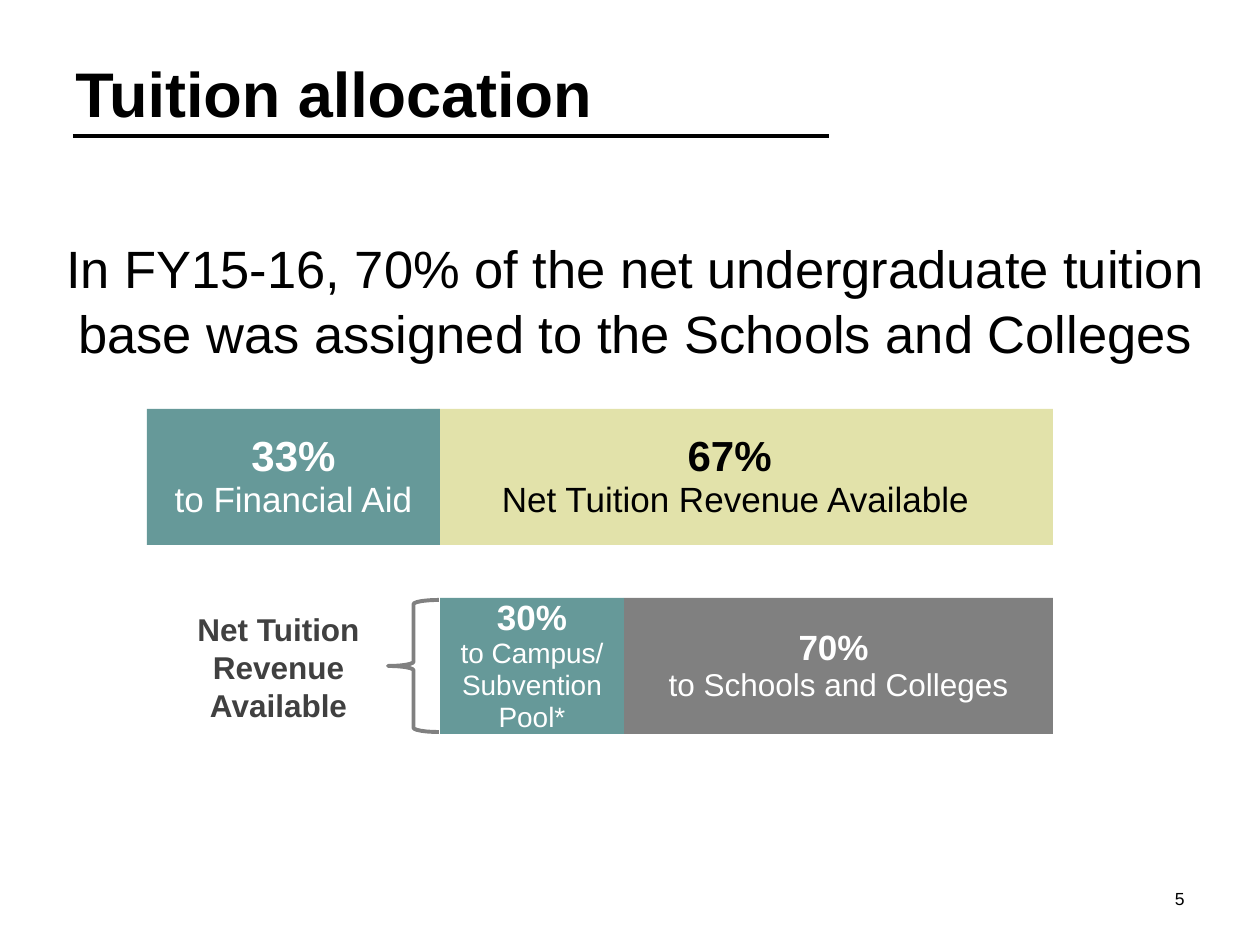
from lxml import etree
from pptx import Presentation
from pptx.dml.color import RGBColor
from pptx.enum.shapes import MSO_CONNECTOR, MSO_SHAPE
from pptx.enum.text import MSO_ANCHOR, PP_ALIGN
from pptx.oxml.ns import qn
from pptx.util import Pt

PX = 914400 / 126
FONT = "Arial"
BLACK = RGBColor(0x00, 0x00, 0x00)
WHITE = RGBColor(0xFF, 0xFF, 0xFF)
DARK = RGBColor(0x40, 0x40, 0x40)
GRAY = RGBColor(0x80, 0x80, 0x80)
TEAL = RGBColor(0x66, 0x99, 0x99)
SAND = RGBColor(0xE2, 0xE2, 0xAA)

BAR_H = 136
SPLIT = 440   # where financial aid ends and net tuition starts
RIGHT = 1053  # shared right edge of both bars


def px(*vals):
    return [round(v * PX) for v in vals]


def add_run(para, text, size, color, bold=False):
    run = para.add_run()
    run.text = text
    font = run.font
    font.name, font.size, font.bold = FONT, Pt(size), bold
    font.color.rgb = color


def add_text(slide, box, text, size, color=BLACK, bold=False,
             align=PP_ALIGN.LEFT, anchor=MSO_ANCHOR.TOP):
    frame = slide.shapes.add_textbox(*px(*box)).text_frame
    frame.word_wrap = True
    frame.vertical_anchor = anchor
    para = frame.paragraphs[0]
    para.alignment = align
    add_run(para, text, size, color, bold)
    return para


def add_part(slide, left, right, top, fill, color, share, label):
    """Draw one bar segment; share and label are (text, size) pairs."""
    shape = slide.shapes.add_shape(
        MSO_SHAPE.RECTANGLE, *px(left, top, right - left, BAR_H))
    shape.shadow.inherit = False
    shape.fill.solid()
    shape.fill.fore_color.rgb = fill
    shape.line.fill.background()
    frame = shape.text_frame
    frame.word_wrap = True
    frame.vertical_anchor = MSO_ANCHOR.MIDDLE
    paras = frame.paragraphs[0], frame.add_paragraph()
    for para, (text, size), bold in zip(paras, (share, label), (True, False)):
        para.alignment = PP_ALIGN.CENTER
        para.line_spacing = 0.95
        add_run(para, text, size, color, bold)


def add_brace(slide, box):
    brace = slide.shapes.add_shape(MSO_SHAPE.LEFT_BRACE, *px(*box))
    brace.shadow.inherit = False
    brace.fill.background()
    brace.line.color.rgb = GRAY
    brace.line.width = Pt(2.25)


def add_rule(slide, left, right, top):
    rule = slide.shapes.add_connector(
        MSO_CONNECTOR.STRAIGHT, *px(left, top, right, top))
    rule.line.color.rgb = BLACK
    rule.line.width = Pt(2.25)
    etree.SubElement(rule._element.spPr, qn("a:effectLst"))


def main():
    deck = Presentation()
    deck.slide_width, deck.slide_height = px(1260, 945)
    slide = deck.slides.add_slide(deck.slide_layouts[6])

    # Title and lead sentence
    add_text(slide, (63, 32, 1029, 104), "Tuition allocation", 36,
             bold=True, anchor=MSO_ANCHOR.BOTTOM)
    add_rule(slide, 73, 829, 136)
    lead = add_text(slide, (42, 227, 1187, 300),
                    "In FY15-16, 70% of the net undergraduate tuition base "
                    "was assigned to the Schools and Colleges", 30,
                    align=PP_ALIGN.CENTER)
    lead.space_before = Pt(6)
    lead.line_spacing = 1.04

    # Total tuition bar; the left part overlaps the right one
    add_part(slide, 418, RIGHT, 409, SAND, BLACK,
             ("67% ", 24), ("Net Tuition Revenue Available", 20))
    add_part(slide, 147, SPLIT, 409, TEAL, WHITE,
             ("33%", 24), ("to Financial Aid", 20))

    # Net tuition bar
    add_part(slide, 624, RIGHT, 598, GRAY, WHITE,
             ("70% ", 20), ("to Schools and Colleges", 18))
    add_part(slide, SPLIT, 624, 598, TEAL, WHITE,
             ("30%", 20), ("to Campus/ Subvention Pool*", 16))

    # Label and brace of the net tuition bar
    add_text(slide, (169, 604, 219, 127), "Net Tuition Revenue Available",
             18, DARK, True, PP_ALIGN.CENTER)
    add_brace(slide, (388, 600, 51, 132))

    # Page number
    add_text(slide, (903, 882, 294, 42), "5", 10, align=PP_ALIGN.RIGHT)

    deck.save("out.pptx")


if __name__ == "__main__":
    main()
